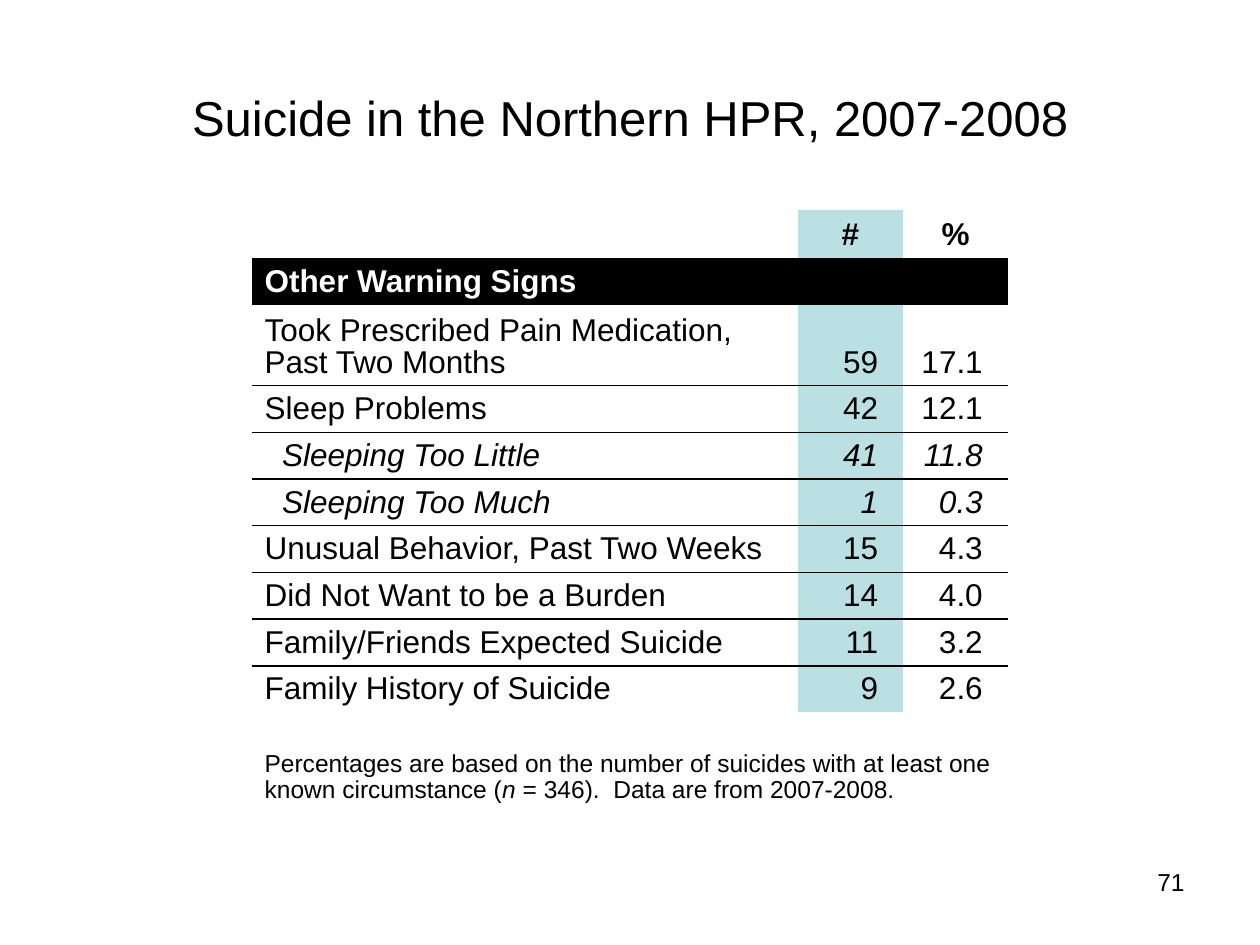
"""Build a slide with a table of warning signs for suicide."""
from lxml.etree import SubElement
from pptx import Presentation
from pptx.dml.color import RGBColor
from pptx.enum.text import MSO_ANCHOR as Anchor, PP_ALIGN as Align
from pptx.oxml.ns import qn
from pptx.util import Inches, Pt

COLORS = {"black": "000000", "white": "FFFFFF", "teal": "BBE0E3"}
FONT = "Arial"
NO_STYLE = "{2D5ABB26-0587-4C30-8999-92F81FD0307C}"
TITLE = "Suicide in the Northern HPR, 2007-2008"
PAGE_NUMBER = "71"
HEADERS = ["#", "%"]
SECTION = "Other Warning Signs"
SIGNS = [
    ("Took Prescribed Pain Medication, Past Two Months", "59", "17.1"),
    ("Sleep Problems", "42", "12.1"),
    ("Sleeping Too Little", "41", "11.8"),
    ("Sleeping Too Much", "1", "0.3"),
    ("Unusual Behavior, Past Two Weeks", "15", "4.3"),
    ("Did Not Want to be a Burden", "14", "4.0"),
    ("Family/Friends Expected Suicide", "11", "3.2"),
    ("Family History of Suicide", "9", "2.6"),
]
SUBTYPES = {"Sleeping Too Little", "Sleeping Too Much"}
NOTE = [
    ("Percentages are based on the number of suicides with at least one known circumstance (", False),
    ("n ", True),
    ("= 346).  Data are from 2007-2008.", False),
]
COLUMN_WIDTHS = [4.33, 0.84, 0.83]
HEADER_HEIGHT, SECTION_HEIGHT, TALL_HEIGHT = 0.38, 0.36, 0.63
SINGLE_LINES_HEIGHT, GAP_HEIGHT, NOTE_HEIGHT = 2.57, 0.23, 0.54
ROW_SPACING, NOTE_SPACING = 0.9, 0.95


def write(frame, text, size=18, color="black", bold=False, italic=False,
          align=Align.LEFT, spacing=None):
    """Put a string, or a list of (string, italic) pairs, in a text frame."""
    para = frame.paragraphs[0]
    para.alignment = align
    if spacing:
        para.line_spacing = spacing
    for piece, slanted in [(text, italic)] if isinstance(text, str) else text:
        span = para.add_run()
        span.text = piece
        font = span.font
        font.name, font.size, font.bold, font.italic = FONT, Pt(size), bold, slanted
        font.color.rgb = RGBColor.from_string(COLORS[color])


def add_label(page, text, left, top, width, height, anchor=Anchor.TOP, **style):
    box = page.shapes.add_textbox(*map(Inches, (left, top, width, height)))
    box.text_frame.word_wrap = True
    box.text_frame.vertical_anchor = anchor
    write(box.text_frame, text, **style)


def set_rule(cell, side, visible):
    line = SubElement(cell._tc.get_or_add_tcPr(), qn(f"a:{side}"), w=str(Pt(1)))
    if visible:
        fill = SubElement(line, qn("a:solidFill"))
        SubElement(fill, qn("a:srgbClr"), val=COLORS["black"])
    else:
        SubElement(line, qn("a:noFill"))


def paint(cell, color):
    if color:
        cell.fill.solid()
        cell.fill.fore_color.rgb = RGBColor.from_string(COLORS[color])
    else:
        cell.fill.background()


def add_signs_table(page):
    single_lines = len(SIGNS) - 1
    heights = [HEADER_HEIGHT, SECTION_HEIGHT, TALL_HEIGHT]
    heights += [SINGLE_LINES_HEIGHT / single_lines] * single_lines + [GAP_HEIGHT, NOTE_HEIGHT]
    frame = page.shapes.add_table(len(heights), len(COLUMN_WIDTHS), Inches(2), Inches(1.67),
                                  Inches(sum(COLUMN_WIDTHS)), Inches(sum(heights)))
    table = frame.table
    table.first_row = table.horz_banding = False
    table._tbl.tblPr.find(qn("a:tableStyleId")).text = NO_STYLE
    for column, width in zip(table.columns, COLUMN_WIDTHS):
        column.width = Inches(width)
    for row, height in zip(table.rows, heights):
        row.height = Inches(height)

    first, last = 2, len(SIGNS) + 1
    for row_index in range(len(heights)):
        for column_index in range(len(COLUMN_WIDTHS)):
            cell = table.cell(row_index, column_index)
            cell.vertical_anchor = Anchor.BOTTOM
            set_rule(cell, "lnT", first < row_index <= last)
            set_rule(cell, "lnB", first <= row_index < last)
            shaded = column_index == 1 and row_index <= last
            paint(cell, "black" if row_index == 1 else "teal" if shaded else None)

    for column_index, header in enumerate(HEADERS, 1):
        write(table.cell(0, column_index).text_frame, header, bold=True,
              align=Align.CENTER, spacing=ROW_SPACING)
    for row_index, (sign, *values) in enumerate(SIGNS, first):
        italic = sign in SUBTYPES
        label = table.cell(row_index, 0)
        if italic:
            label.margin_left = Inches(0.24)
        write(label.text_frame, sign, italic=italic, spacing=ROW_SPACING)
        for column_index, value in enumerate(values, 1):
            cell = table.cell(row_index, column_index)
            cell.margin_right = Inches(0.2)
            write(cell.text_frame, value, italic=italic, align=Align.RIGHT, spacing=ROW_SPACING)

    for row_index, text, style in [
        (1, SECTION, {"color": "white", "bold": True, "spacing": ROW_SPACING}),
        (len(heights) - 1, NOTE, {"size": 14, "spacing": NOTE_SPACING}),
    ]:
        cell = table.cell(row_index, 0)
        cell.merge(table.cell(row_index, len(COLUMN_WIDTHS) - 1))
        write(cell.text_frame, text, **style)

    for cell in table.iter_cells():
        if not cell.text_frame.text:
            SubElement(cell.text_frame.paragraphs[0]._p, qn("a:endParaRPr"), sz="800")


def main():
    deck = Presentation()
    deck.slide_width, deck.slide_height = Inches(10), Inches(7.5)
    page = deck.slides.add_slide(deck.slide_layouts[6])
    add_label(page, TITLE, 0.5, 0.3, 9, 1.25, anchor=Anchor.MIDDLE, size=28, align=Align.CENTER)
    add_signs_table(page)
    add_label(page, PAGE_NUMBER, 7.17, 6.83, 2.33, 0.52, size=14, align=Align.RIGHT)
    deck.save("out.pptx")


if __name__ == "__main__":
    main()
